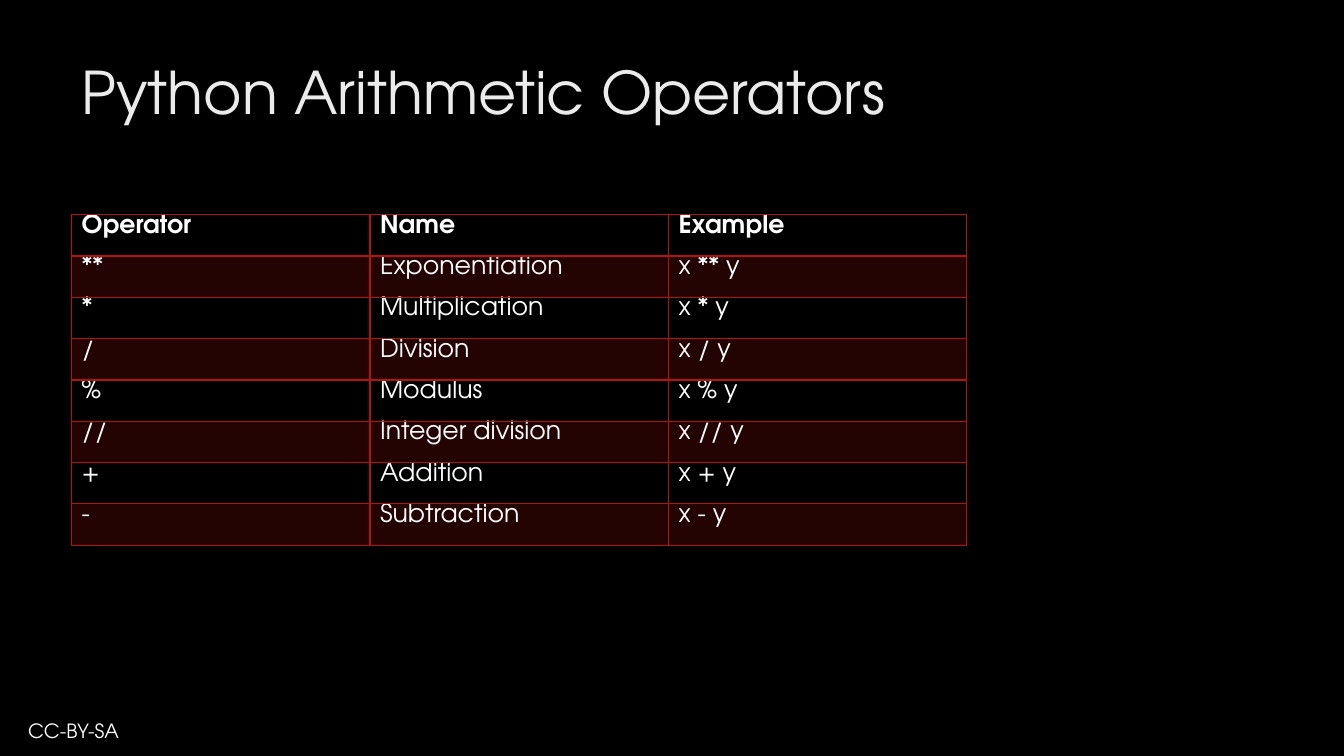
"""Build the slide on Python arithmetic operators."""
import dataclasses

import lxml.etree
import pptx
import pptx.dml.color
import pptx.enum.text
import pptx.oxml.ns
import pptx.util


@dataclasses.dataclass(frozen=True)
class Theme:
    """Hold the colours, font and type sizes."""
    font: str = "TeX Gyre Adventor"
    background: str = "000000"
    heading: str = "EBEBEB"
    body: str = "FFFFFF"
    accent: str = "B01513"
    band_opacity: int = 20
    heading_size: int = 42
    table_size: int = 18
    footer_size: int = 14
    thin_line: int = 1
    thick_line: int = 2


THEME = Theme()
PAGE_WIDTH = pptx.util.Inches(13.33)
PAGE_HEIGHT = pptx.util.Inches(7.5)
LEFT_EDGE = 0.71
TABLE_TOP = 2.13
COLUMN_WIDTH = 2.96
ROW_HEIGHT = 0.41
HEADERS = ("Operator", "Name", "Example")
OPERATORS = (
    ("**", "Exponentiation"),
    ("*", "Multiplication"),
    ("/", "Division"),
    ("%", "Modulus"),
    ("//", "Integer division"),
    ("+", "Addition"),
    ("-", "Subtraction"),
)


def rgb(colour):
    """Turn a hex string into a colour."""
    return pptx.dml.color.RGBColor.from_string(colour)


def write(frame, text, *, size, colour=THEME.body, bold=False):
    """Put formatted text into a text frame."""
    span = frame.paragraphs[0].add_run()
    span.text = text
    span.font.name = THEME.font
    span.font.size = pptx.util.Pt(size)
    span.font.color.rgb = rgb(colour)
    span.font.bold = bold


def add_label(page, text, left, top, width, height, **style):
    """Add a wrapped, top-anchored text box, placed in inches."""
    box = page.shapes.add_textbox(*map(pptx.util.Inches, (left, top, width, height)))
    box.text_frame.word_wrap = True
    box.text_frame.vertical_anchor = pptx.enum.text.MSO_ANCHOR.TOP
    write(box.text_frame, text, **style)


def add_solid(parent, colour):
    """Add a solid fill element and return its colour element."""
    fill = lxml.etree.SubElement(parent, pptx.oxml.ns.qn("a:solidFill"))
    return lxml.etree.SubElement(fill, pptx.oxml.ns.qn("a:srgbClr"), val=colour)


def style_cell(cell, *, banded, top, bottom):
    """Draw the borders of a cell and its translucent band."""
    properties = cell._tc.get_or_add_tcPr()
    widths = {"L": THEME.thin_line, "R": THEME.thin_line, "T": top, "B": bottom}
    for side, width in widths.items():
        line = lxml.etree.SubElement(
            properties, pptx.oxml.ns.qn(f"a:ln{side}"), w=str(pptx.util.Pt(width)))
        add_solid(line, THEME.accent)
    if banded:
        shade = add_solid(properties, THEME.accent)
        lxml.etree.SubElement(
            shade, pptx.oxml.ns.qn("a:alpha"), val=str(THEME.band_opacity * 1000))
    else:
        cell.fill.background()


def add_operator_table(page):
    """Add the table of operators, names and examples."""
    rows = [HEADERS] + [(sign, name, f"x {sign} y") for sign, name in OPERATORS]
    size = (COLUMN_WIDTH * len(HEADERS), ROW_HEIGHT * len(rows))
    table = page.shapes.add_table(
        len(rows), len(HEADERS),
        *map(pptx.util.Inches, (LEFT_EDGE, TABLE_TOP, *size))).table
    table.first_row = table.horz_banding = False
    for row, texts in enumerate(rows):
        for column, text in enumerate(texts):
            cell = table.cell(row, column)
            cell.margin_top = cell.margin_bottom = 0
            write(cell.text_frame, text, size=THEME.table_size, bold=row == 0)
            style_cell(
                cell, banded=row % 2 == 1,
                top=THEME.thick_line if row == 1 else THEME.thin_line,
                bottom=THEME.thick_line if row == 0 else THEME.thin_line)


def main():
    """Build the slide and save it."""
    deck = pptx.Presentation()
    deck.slide_width, deck.slide_height = PAGE_WIDTH, PAGE_HEIGHT
    page = deck.slides.add_slide(deck.slide_layouts[6])
    page.background.fill.solid()
    page.background.fill.fore_color.rgb = rgb(THEME.background)
    add_label(page, "CC-BY-SA", 0.18, 7.08, 5.67, 0.34, size=THEME.footer_size)
    add_label(page, "Python Arithmetic Operators", LEFT_EDGE, 0.5, 10.29, 1.53,
              size=THEME.heading_size, colour=THEME.heading)
    add_operator_table(page)
    deck.save("out.pptx")


if __name__ == "__main__":
    main()
